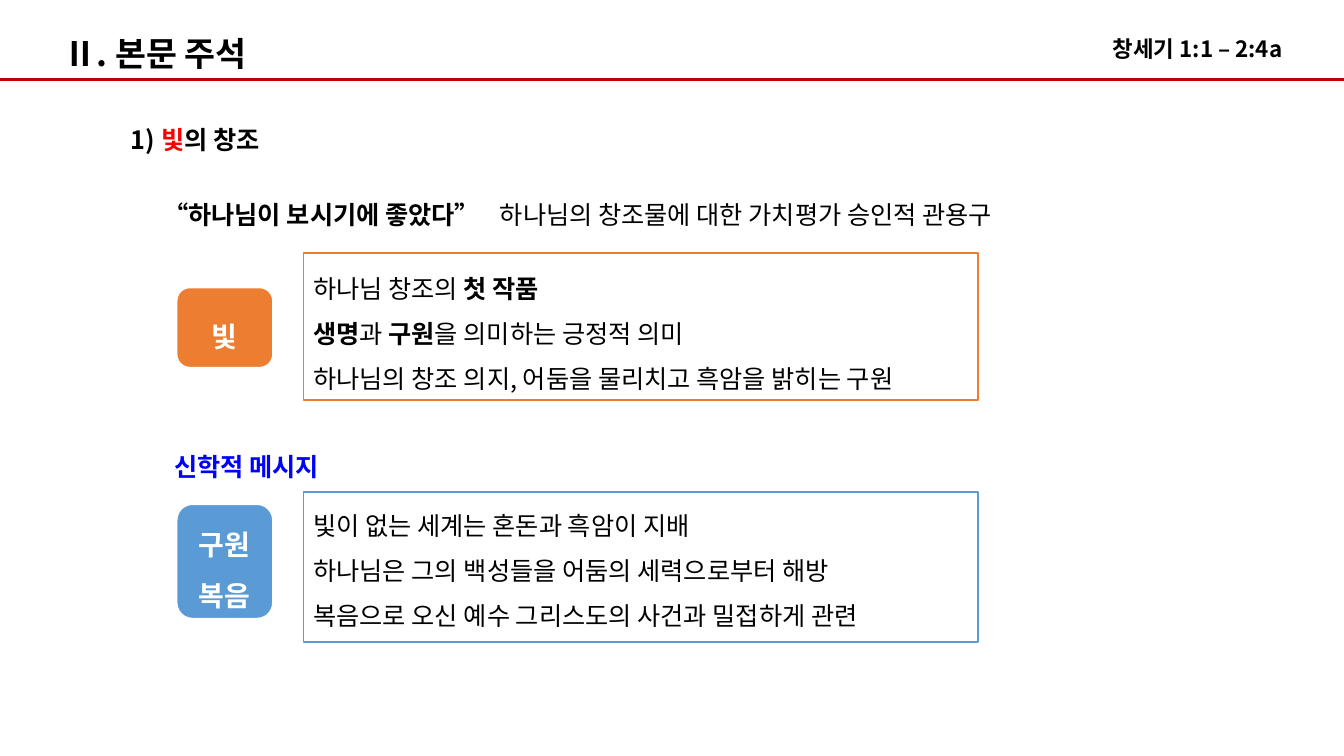
from lxml import etree
from pptx import Presentation
from pptx.dml.color import RGBColor
from pptx.enum import shapes, text
from pptx.oxml.ns import qn
from pptx.util import Inches, Pt

FONT = "Noto Sans CJK KR"
COLORS = {
    "black": "000000", "white": "FFFFFF", "red": "FF0000", "blue": "0000FF",
    "rule": "C00000", "orange": "ED7D31", "sky": "5B9BD5",
}
QUOTE_TAB = 3.34
PANEL_LEFT, PANEL_WIDTH = 3.01, 6.69
BADGE_LEFT, BADGE_WIDTH = 1.75, 0.96

# Each span is (wording, bold, colour)
HEADINGS = [
    ((10.94, 0.17, 2.07, 0.5), 16, 1.5, [[("창세기 1:1 – 2:4a", True, "black")]]),
    ((0.53, 0.28, 2.21, 0.5), 24, 1, [[("Ⅱ. 본문 주석", True, "black")]]),
    ((1.2, 1.18, 1.63, 0.4), 18, 1, [
        [("1) ", True, "black"), ("빛", True, "red"), ("의 창조", True, "black")]]),
    ((1.52, 1.78, 9.25, 0.5), 18, 1.5, [
        [("“하나님이 보시기에 좋았다”", True, "black"),
         ("\t하나님의 창조물에 대한 가치평가 승인적 관용구", False, "black")]]),
    ((1.63, 4.43, 1.81, 0.4), 18, 1, [[("신학적 메시지", True, "blue")]]),
]
LIGHT_LINES = [
    [("하나님 창조의 ", False, "black"), ("첫 작품", True, "black")],
    [("생명", True, "black"), ("과 ", False, "black"), ("구원", True, "black"),
     ("을 의미하는 긍정적 의미", False, "black")],
    [("하나님의 창조 의지, 어둠을 물리치고 흑암을 밝히는 구원", False, "black")],
]
GOSPEL_LINES = [
    [("빛이 없는 세계는 혼돈과 흑암이 지배", False, "black")],
    [("하나님은 그의 백성들을 어둠의 세력으로부터 해방", False, "black")],
    [("복음으로 오신 예수 그리스도의 사건과 밀접하게 관련", False, "black")],
]
TOPICS = [
    {"color": "orange", "panel": (2.51, 1.46), "lines_at": (2.51, 1.46),
     "lines": LIGHT_LINES, "badge": (2.85, 0.8), "words": ["빛"]},
    {"color": "sky", "panel": (4.88, 1.49), "lines_at": (4.86, 1.41),
     "lines": GOSPEL_LINES, "badge": (5, 1.14), "words": ["구원", "복음"]},
]


def rgb(name):
    return RGBColor.from_string(COLORS[name])


def write(box, lines, size, spacing, align=text.PP_ALIGN.LEFT):
    frame = box.text_frame
    for index, spans in enumerate(lines):
        para = frame.paragraphs[0] if index == 0 else frame.add_paragraph()
        para.alignment = align
        para.line_spacing = spacing
        for wording, bold, color in spans:
            span = para.add_run()
            span.text = wording
            span.font.size = Pt(size)
            span.font.bold = bold
            span.font.name = FONT
            span.font.color.rgb = rgb(color)
            east_asian = etree.SubElement(span.font._element, qn("a:ea"))
            east_asian.set("typeface", FONT)


def add_text(page, place, lines, size, spacing):
    box = page.shapes.add_textbox(*map(Inches, place))
    write(box, lines, size, spacing)
    box.text_frame.word_wrap = False
    box.text_frame.auto_size = text.MSO_AUTO_SIZE.SHAPE_TO_FIT_TEXT
    return box


def add_block(page, kind, place, fill, line, width):
    block = page.shapes.add_shape(kind, *map(Inches, place))
    block.shadow.inherit = False
    block.fill.solid()
    block.fill.fore_color.rgb = rgb(fill)
    block.line.color.rgb = rgb(line)
    block.line.width = Pt(width)
    return block


def add_tab(para, position):
    stops = etree.SubElement(para._p.get_or_add_pPr(), qn("a:tabLst"))
    etree.SubElement(stops, qn("a:tab"), pos=str(Inches(position)), algn="l")


def add_topic(page, topic):
    top, height = topic["panel"]
    add_block(page, shapes.MSO_SHAPE.RECTANGLE,
              (PANEL_LEFT, top, PANEL_WIDTH, height), "white", topic["color"], 1)
    top, height = topic["lines_at"]
    add_text(page, (PANEL_LEFT, top, PANEL_WIDTH, height), topic["lines"], 18, 1.5)
    top, height = topic["badge"]
    badge = add_block(page, shapes.MSO_SHAPE.ROUNDED_RECTANGLE,
                      (BADGE_LEFT, top, BADGE_WIDTH, height), topic["color"], "white", 1.5)
    words = [[(word, True, "white")] for word in topic["words"]]
    write(badge, words, 20, 1.5, text.PP_ALIGN.CENTER)
    badge.text_frame.vertical_anchor = text.MSO_ANCHOR.MIDDLE


def main():
    deck = Presentation()
    deck.slide_width, deck.slide_height = Inches(13.33), Inches(7.5)
    page = deck.slides.add_slide(deck.slide_layouts[6])

    rule = page.shapes.add_connector(
        shapes.MSO_CONNECTOR.STRAIGHT, 0, Inches(0.79), deck.slide_width, Inches(0.79))
    rule.line.color.rgb = rgb("rule")
    rule.line.width = Pt(2.25)
    etree.SubElement(rule._element.spPr, qn("a:effectLst"))

    for place, size, spacing, lines in HEADINGS:
        box = add_text(page, place, lines, size, spacing)
        if "\t" in box.text_frame.text:
            add_tab(box.text_frame.paragraphs[0], QUOTE_TAB)
    for topic in TOPICS:
        add_topic(page, topic)

    deck.save("out.pptx")


if __name__ == "__main__":
    main()
